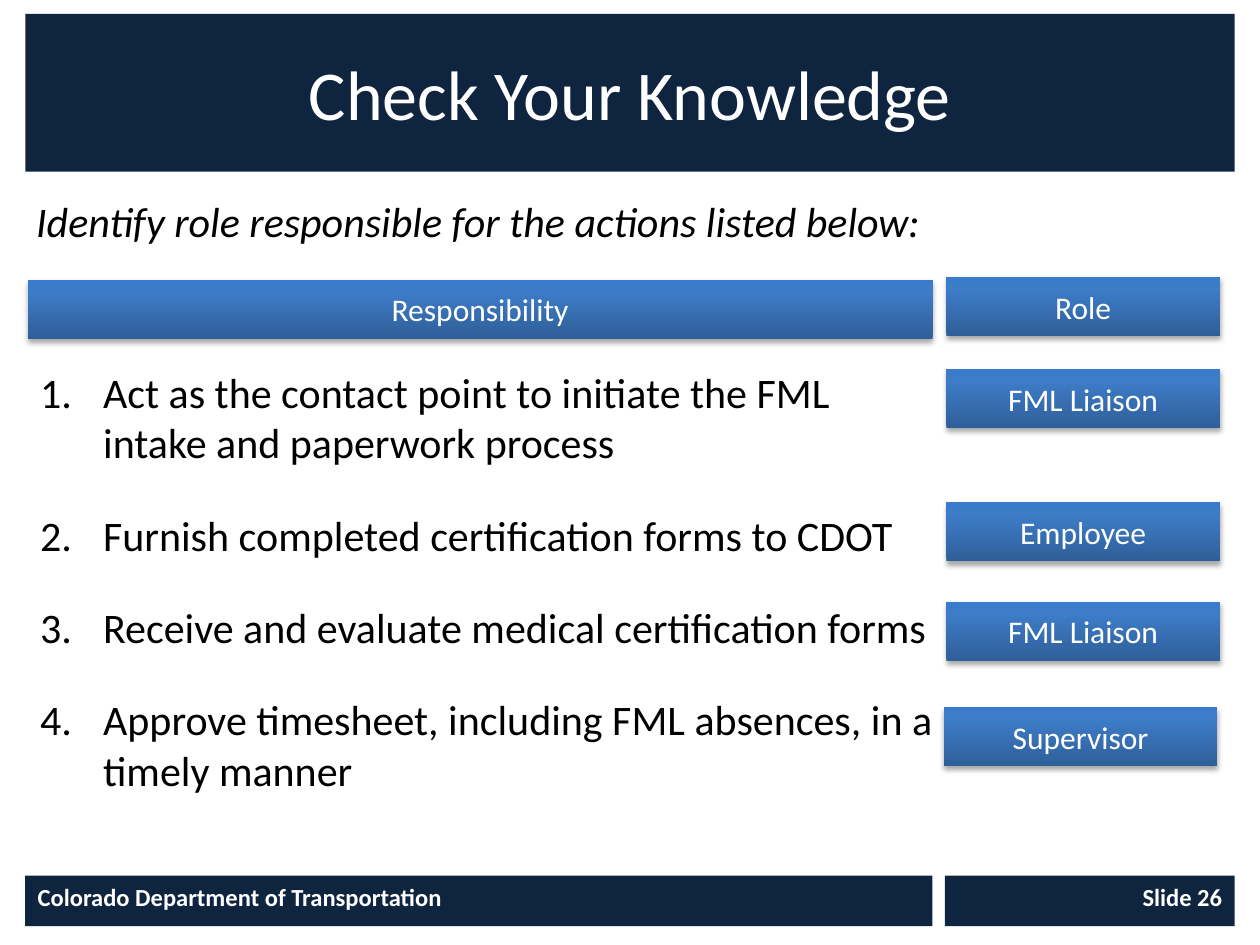
from lxml.etree import SubElement
from pptx import Presentation
from pptx.dml.color import RGBColor
from pptx.enum.shapes import MSO_SHAPE
from pptx.enum.text import MSO_ANCHOR, PP_ALIGN
from pptx.oxml.ns import qn
from pptx.util import Cm, Pt

COLORS = {"navy": "0F243E", "white": "FFFFFF", "black": "000000"}
GRADIENT = [(0, "2F5F99"), (80, "3D7CC7"), (100, "3A7CCB")]
FORMATS = {
    "title": {"size": Pt(40), "bold": False},
    "prompt": {"size": Pt(24), "italic": True},
    "item": {"size": Pt(24)},
    "button": {"size": Pt(18)},
    "footer": {"size": Pt(14), "bold": True},
}


def write(paragraph, text, style, color, alignment=PP_ALIGN.LEFT):
    paragraph.text = text
    paragraph.alignment = alignment
    paragraph.font.name = "Calibri"
    paragraph.font.color.rgb = RGBColor.from_string(COLORS[color])
    for name, value in FORMATS[style].items():
        setattr(paragraph.font, name, value)


def add_color(parent, color):
    return SubElement(parent, qn("a:srgbClr"), val=color)


presentation = Presentation()
presentation.slide_width = Cm(25.4)
presentation.slide_height = Cm(19.05)
slide = presentation.slides.add_slide(presentation.slide_layouts[5])

title = slide.shapes.title
title.left, title.top, title.width, title.height = Cm(0.51), Cm(0.28), Cm(24.38), Cm(3.18)
title.fill.solid()
title.fill.fore_color.rgb = RGBColor.from_string(COLORS["navy"])
title.text_frame.vertical_anchor = MSO_ANCHOR.MIDDLE
write(title.text_frame.paragraphs[0], "Check Your Knowledge", "title", "white", PP_ALIGN.CENTER)

items = [
    "Act as the contact point to initiate the FML intake and paperwork process",
    "Furnish completed certification forms to CDOT",
    "Receive and evaluate medical certification forms",
    "Approve timesheet, including FML absences, in a timely manner",
]
responsibilities = slide.shapes.add_textbox(Cm(0.56), Cm(7.26), Cm(18.52), Cm(9.65))
frame = responsibilities.text_frame
frame.word_wrap = True
for index, item in enumerate(items):
    paragraph = frame.add_paragraph() if index else frame.paragraphs[0]
    properties = paragraph._p.get_or_add_pPr()
    properties.set("marL", str(Cm(1.27)))
    properties.set("indent", str(-Cm(1.27)))
    SubElement(properties, qn("a:buFont"), typeface="+mj-lt")
    SubElement(properties, qn("a:buAutoNum"), type="arabicPeriod")
    if index:
        paragraph.space_before = Pt(24)
    write(paragraph, item, "item", "black")

footers = [
    (0.51, 18.29, "Colorado Department of Transportation", PP_ALIGN.LEFT),
    (19.05, 5.84, "Slide 26", PP_ALIGN.RIGHT),
]
for left, width, text, alignment in footers:
    footer = slide.shapes.add_shape(MSO_SHAPE.RECTANGLE, Cm(left), Cm(17.65), Cm(width), Cm(1.02))
    footer.shadow.inherit = False
    footer.fill.solid()
    footer.fill.fore_color.rgb = RGBColor.from_string(COLORS["navy"])
    footer.line.fill.background()
    footer.text_frame.vertical_anchor = MSO_ANCHOR.TOP
    write(footer.text_frame.paragraphs[0], text, "footer", "white", alignment)

buttons = [
    (0.56, 5.64, 18.24, "Responsibility"),
    (19.08, 5.59, 5.51, "Role"),
    (19.08, 7.44, 5.51, "FML Liaison"),
    (19.08, 10.13, 5.51, "Employee"),
    (19.08, 12.13, 5.51, "FML Liaison"),
    (19.03, 14.26, 5.51, "Supervisor"),
]
for left, top, width, text in buttons:
    button = slide.shapes.add_shape(
        MSO_SHAPE.ACTION_BUTTON_CUSTOM, Cm(left), Cm(top), Cm(width), Cm(1.19)
    )
    button.line.fill.background()
    button.fill.gradient()
    button.fill.gradient_angle = 90
    stops = button._element.spPr.find(".//" + qn("a:gsLst"))
    for stop in list(stops):
        stops.remove(stop)
    for position, color in GRADIENT:
        add_color(SubElement(stops, qn("a:gs"), pos=str(position * 1000)), color)
    button.shadow.inherit = False
    effects = button._element.spPr.find(qn("a:effectLst"))
    shadow = SubElement(
        effects, qn("a:outerShdw"), blurRad=str(Pt(3.1)), dist=str(Pt(1.8)),
        dir="5400000", rotWithShape="0",
    )
    SubElement(add_color(shadow, COLORS["black"]), qn("a:alpha"), val="35000")
    button.text_frame.vertical_anchor = MSO_ANCHOR.MIDDLE
    write(button.text_frame.paragraphs[0], text, "button", "white", PP_ALIGN.CENTER)

prompt = slide.shapes.add_textbox(Cm(0.48), Cm(3.81), Cm(20.04), Cm(1.65))
prompt.text_frame.word_wrap = True
write(
    prompt.text_frame.paragraphs[0],
    "Identify role responsible for the actions listed below:", "prompt", "black",
)

presentation.save("out.pptx")
